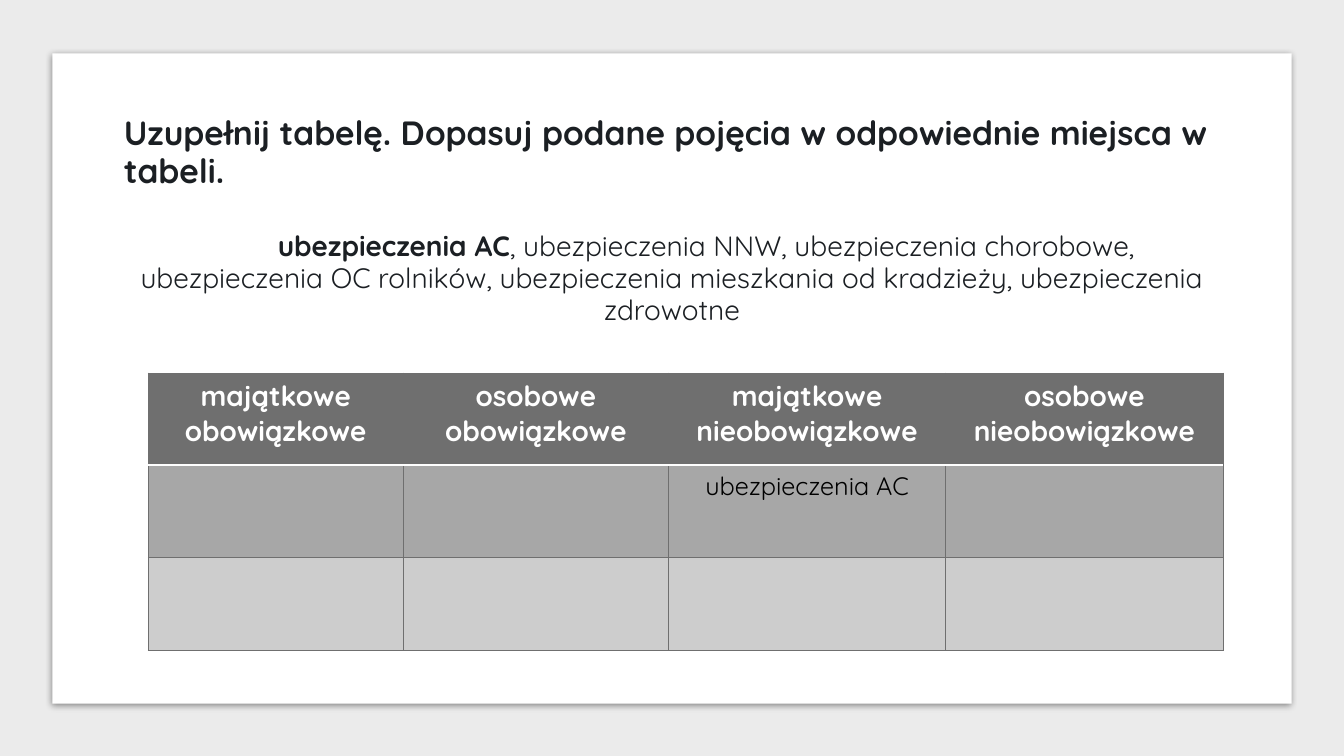
import pptx
import pptx.util
import pptx.dml.color
import pptx.enum.shapes
import pptx.enum.text
import pptx.oxml
import pptx.oxml.ns

Inches, Pt = pptx.util.Inches, pptx.util.Pt
CENTER = pptx.enum.text.PP_ALIGN.CENTER

TASK = "Uzupełnij tabelę. Dopasuj podane pojęcia w odpowiednie miejsca w tabeli."
EXAMPLE = "ubezpieczenia AC"
OTHER_TERMS = (", ubezpieczenia NNW, ubezpieczenia chorobowe, ubezpieczenia OC rolników, "
               "ubezpieczenia mieszkania od kradzieży, ubezpieczenia zdrowotne")
ROWS = [
    ["majątkowe obowiązkowe", "osobowe obowiązkowe",
     "majątkowe nieobowiązkowe", "osobowe nieobowiązkowe"],
    ["", "", EXAMPLE, ""],
    ["", "", "", ""],
]
COLUMN_WIDTHS = [2.53, 2.63, 2.75, 2.75]
ROW_HEIGHT = 0.917
COLORS = {
    "backdrop": "EBEBEB", "card": "FFFFFF", "ink": "1B1F23", "shadow": "000000",
    "header": "6F6F6F", "header_text": "FFFFFF", "cell_text": "000000",
    "grid": "6F6F6F", "header_rule": "FFFFFF",
}
ROW_FILLS = [COLORS["header"], "A7A7A7", "CDCDCD"]
FONT = "Quicksand"


def rgb(value):
    return pptx.dml.color.RGBColor.from_string(value)


def xml(markup):
    """Parse one element whose opening tag carries the placeholder NS."""
    return pptx.oxml.parse_xml(markup.replace("NS", pptx.oxml.ns.nsdecls("a"), 1))


def add_run(paragraph, text, size, color, bold=False):
    run = paragraph.add_run()
    run.text = text
    run.font.name = FONT
    run.font.size = Pt(size)
    run.font.bold = bold
    run.font.color.rgb = rgb(color)


def add_panel(slide, left, top, width, height, color):
    panel = slide.shapes.add_shape(
        pptx.enum.shapes.MSO_SHAPE.RECTANGLE,
        Inches(left), Inches(top), Inches(width), Inches(height))
    panel.shadow.inherit = False
    panel.fill.solid()
    panel.fill.fore_color.rgb = rgb(color)
    panel.line.fill.background()
    return panel


def add_soft_shadow(panel):
    effects = panel._element.spPr.find(pptx.oxml.ns.qn("a:effectLst"))
    effects.append(xml(
        f'<a:outerShdw NS blurRad="{Pt(5)}" dist="{Pt(1.4)}" dir="5400000" algn="t" '
        f'rotWithShape="0"><a:srgbClr val="{COLORS["shadow"]}"><a:alpha val="43000"/>'
        '</a:srgbClr></a:outerShdw>'))


def set_borders(cell, row):
    """Grid lines all round, with a white rule between header and body."""
    rule, grid = (COLORS["header_rule"], 1.47), (COLORS["grid"], 0.75)
    sides = {"L": grid, "R": grid,
             "T": rule if row == 1 else grid,
             "B": rule if row == 0 else grid}
    properties = cell._tc.get_or_add_tcPr()
    for side, (color, width) in sides.items():
        properties.append(xml(
            f'<a:ln{side} NS w="{Pt(width)}"><a:solidFill><a:srgbClr val="{color}"/>'
            f'</a:solidFill></a:ln{side}>'))


def add_terms_table(slide):
    table = slide.shapes.add_table(
        len(ROWS), len(COLUMN_WIDTHS), Inches(1.47), Inches(3.7),
        Inches(sum(COLUMN_WIDTHS)), Inches(ROW_HEIGHT * len(ROWS))).table
    for column, width in zip(table.columns, COLUMN_WIDTHS):
        column.width = Inches(width)
    for r, terms in enumerate(ROWS):
        table.rows[r].height = Inches(ROW_HEIGHT)
        for c, term in enumerate(terms):
            cell = table.cell(r, c)
            set_borders(cell, r)
            cell.fill.solid()
            cell.fill.fore_color.rgb = rgb(ROW_FILLS[r])
            cell.margin_left = cell.margin_right = Inches(0.18)
            paragraph = cell.text_frame.paragraphs[0]
            paragraph.alignment = CENTER
            if term and r == 0:
                add_run(paragraph, term, 20, COLORS["header_text"], bold=True)
            elif term:
                add_run(paragraph, term, 18, COLORS["cell_text"])


def add_instructions(slide):
    frame = slide.shapes.add_textbox(
        Inches(1.13), Inches(1.09), Inches(11.07), Inches(2.3)).text_frame
    frame.word_wrap = True
    task = frame.paragraphs[0]
    add_run(task, TASK, 24, COLORS["ink"], bold=True)
    terms = frame.add_paragraph()
    terms.alignment = CENTER
    terms.space_before = Pt(28.5)
    terms._p.get_or_add_pPr().set("indent", str(Inches(0.68)))
    add_run(terms, EXAMPLE, 20, COLORS["ink"], bold=True)
    add_run(terms, OTHER_TERMS, 20, COLORS["ink"])
    for paragraph in (task, terms):
        paragraph.line_spacing = 0.95


def main():
    deck = pptx.Presentation()
    deck.slide_width, deck.slide_height = Inches(13.33), Inches(7.5)
    slide = deck.slides.add_slide(deck.slide_layouts[6])
    add_panel(slide, 0, 0, 13.33, 7.5, COLORS["backdrop"])
    add_soft_shadow(add_panel(slide, 0.52, 0.53, 12.29, 6.45, COLORS["card"]))
    add_terms_table(slide)
    add_instructions(slide)
    deck.save("out.pptx")


if __name__ == "__main__":
    main()
